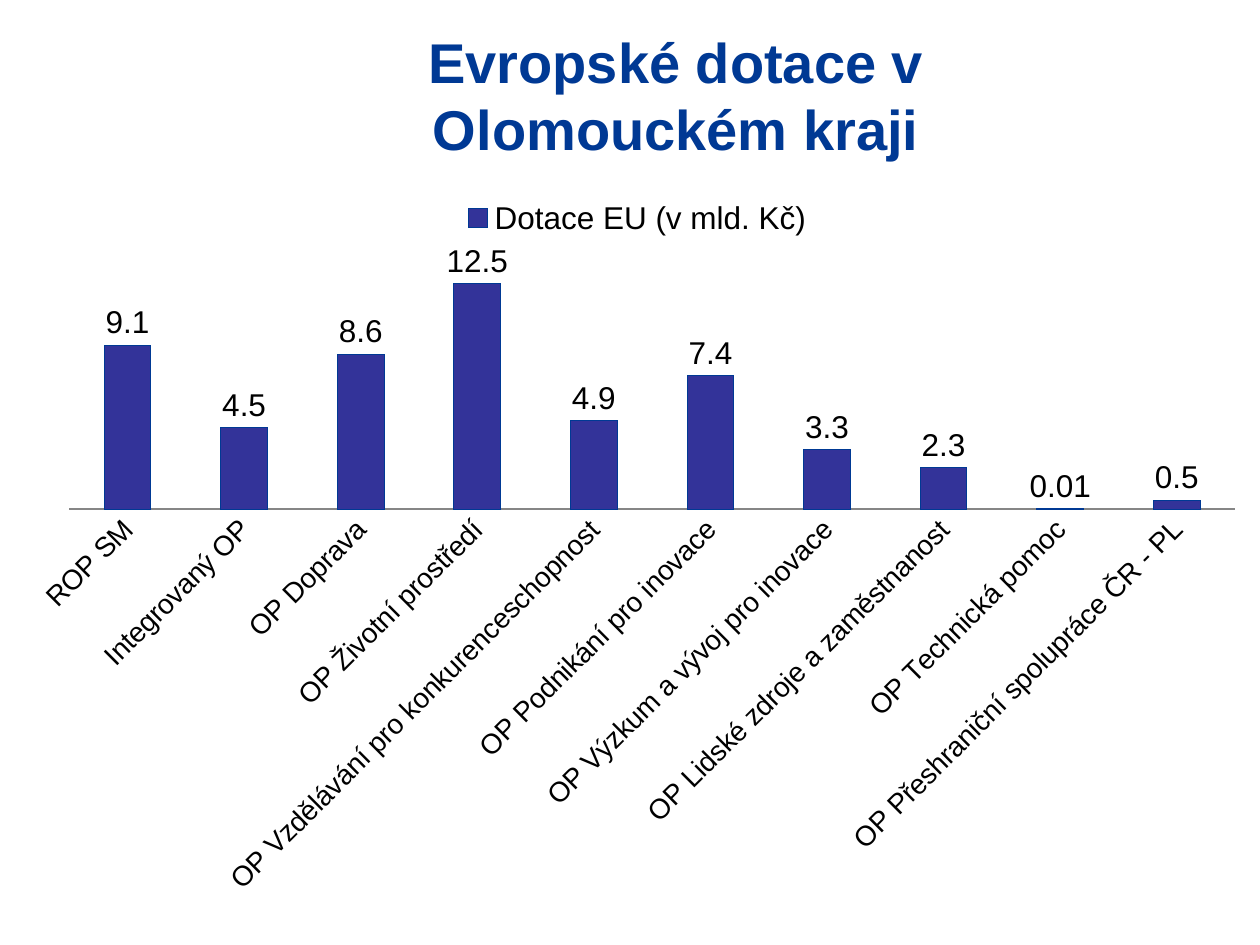
import pptx
import pptx.chart.data
import pptx.dml.color
import pptx.enum.chart
import pptx.enum.text
import pptx.util

TITLE = "Evropské dotace v Olomouckém kraji"
SERIES_NAME = "Dotace EU (v mld. Kč)"
GRANTS = [
    ("ROP SM", 9.1),
    ("Integrovaný OP", 4.5),
    ("OP Doprava", 8.6),
    ("OP Životní prostředí", 12.5),
    ("OP Vzdělávání pro konkurenceschopnost", 4.9),
    ("OP Podnikání pro inovace", 7.4),
    ("OP Výzkum a vývoj pro inovace", 3.3),
    ("OP Lidské zdroje a zaměstnanost", 2.3),
    ("OP Technická pomoc", 0.01),
    ("OP Přeshraniční spolupráce ČR - PL", 0.5),
]

FONT = "Arial"
BLUE = pptx.dml.color.RGBColor(0x00, 0x39, 0x94)
INDIGO = pptx.dml.color.RGBColor(0x33, 0x33, 0x99)
BLACK = pptx.dml.color.RGBColor(0, 0, 0)
GRAY = pptx.dml.color.RGBColor(0x86, 0x86, 0x86)

TITLE_BOX = (2.42, 0.13, 5.89, 1.24)
CHART_BOX = (0.12, 1.47, 9.88, 5.74)


def inches(box):
    return [pptx.util.Inches(length) for length in box]


def style_font(font, size, color, bold=False):
    font.name = FONT
    font.size = pptx.util.Pt(size)
    font.bold = bold
    font.color.rgb = color


def add_title(slide):
    text_frame = slide.shapes.add_textbox(*inches(TITLE_BOX)).text_frame
    text_frame.word_wrap = True
    text_frame.vertical_anchor = pptx.enum.text.MSO_ANCHOR.MIDDLE
    text_frame.text = TITLE
    paragraph = text_frame.paragraphs[0]
    paragraph.alignment = pptx.enum.text.PP_ALIGN.CENTER
    style_font(paragraph.runs[0].font, 32, BLUE, bold=True)


def add_grants_chart(slide):
    data = pptx.chart.data.CategoryChartData(number_format="General")
    data.categories = [name for name, amount in GRANTS]
    data.add_series(SERIES_NAME, [amount for name, amount in GRANTS])
    chart = slide.shapes.add_chart(
        pptx.enum.chart.XL_CHART_TYPE.COLUMN_CLUSTERED, *inches(CHART_BOX), data
    ).chart
    style_font(chart.font, 18, BLACK)
    chart.has_title = False
    chart.has_legend = True
    chart.legend.position = pptx.enum.chart.XL_LEGEND_POSITION.TOP
    chart.legend.include_in_layout = False

    category_axis = chart.category_axis
    category_axis.major_tick_mark = pptx.enum.chart.XL_TICK_MARK.NONE
    category_axis.format.line.color.rgb = GRAY
    style_font(category_axis.tick_labels.font, 16, BLACK)
    chart.value_axis.visible = False
    chart.value_axis.has_major_gridlines = False

    plot = chart.plots[0]
    plot.gap_width = 150
    plot.overlap = -25
    plot.vary_by_categories = False
    plot.has_data_labels = True
    plot.data_labels.show_value = True
    plot.data_labels.position = pptx.enum.chart.XL_LABEL_POSITION.OUTSIDE_END
    style_font(plot.data_labels.font, 18, BLACK)

    column_format = plot.series[0].format
    column_format.fill.solid()
    column_format.fill.fore_color.rgb = INDIGO
    column_format.line.color.rgb = BLUE


def main():
    presentation = pptx.Presentation()
    presentation.slide_width = pptx.util.Inches(10)
    presentation.slide_height = pptx.util.Inches(7.5)
    slide = presentation.slides.add_slide(presentation.slide_layouts[6])
    add_title(slide)
    add_grants_chart(slide)
    presentation.save("out.pptx")


if __name__ == "__main__":
    main()
